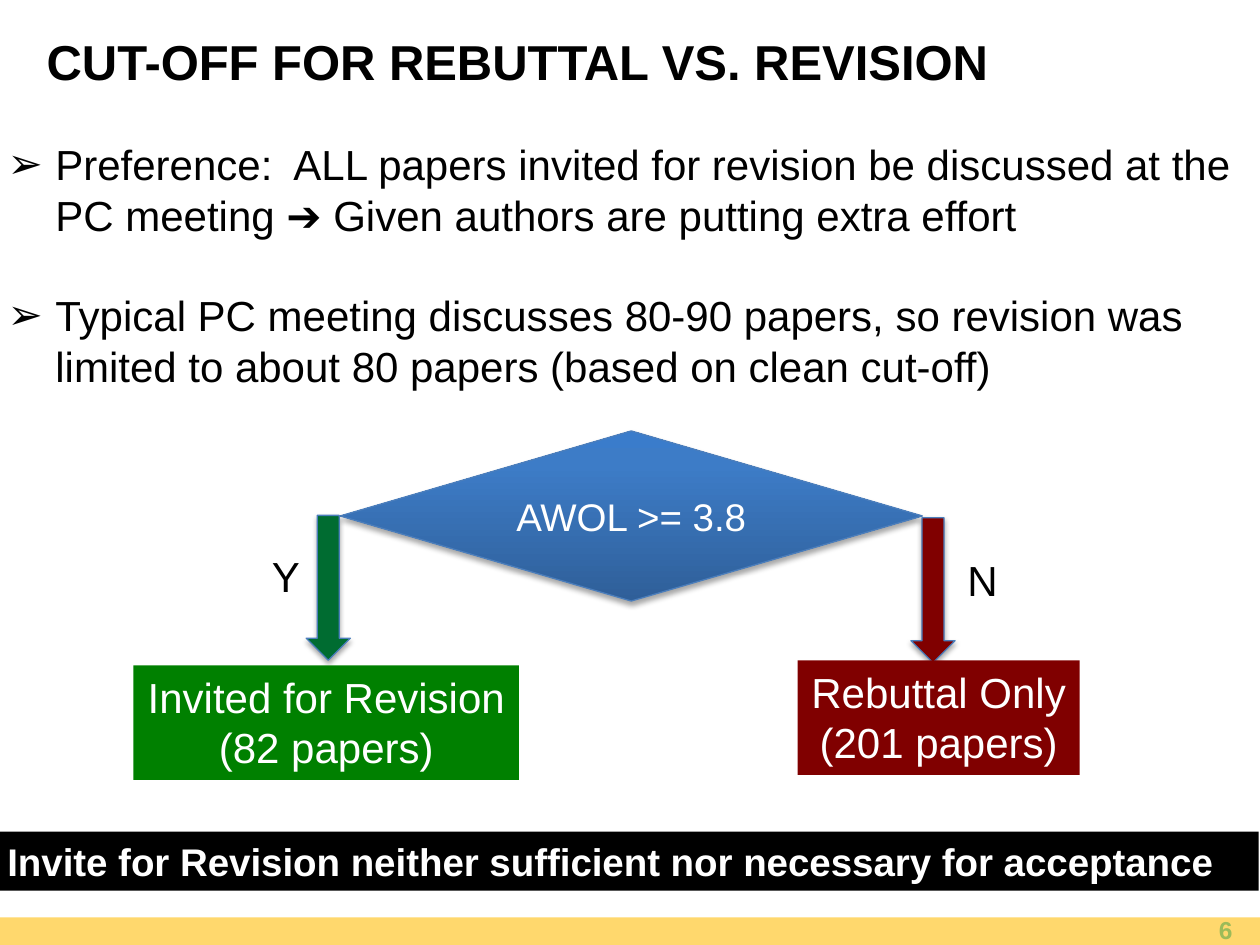
from copy import deepcopy
from dataclasses import dataclass

from pptx import Presentation
from pptx.dml.color import RGBColor
from pptx.enum.shapes import MSO_SHAPE as Kind
from pptx.enum.text import MSO_ANCHOR as Anchor, MSO_AUTO_SIZE as Fit, PP_ALIGN as Align
from pptx.oxml import parse_xml
from pptx.oxml.ns import nsdecls, qn
from pptx.util import Inches, Pt

COLS, ROWS = 100, 75
WIDE, HIGH = Inches(10), Inches(7.5)
EDGE = "4B7EBC"

Area = tuple[float, float, float, float]  # left, top, width, height in cells


@dataclass
class Branch:
    tint: str
    shaft: str
    arrow: Area
    label: str
    spot: Area
    lines: list[str]
    box: Area


BRANCHES = [
    Branch("008000", "006C31", (24.3, 40.9, 3.5, 11.5), "Y", (20.6, 43.2, 4.3, 5),
           ["Invited for Revision", "(82 papers)"], (10.6, 52.8, 30.6, 9.1)),
    Branch("800000", "800000", (72.3, 41.1, 3.5, 11.5), "N", (75.8, 43.5, 4.5, 5),
           ["Rebuttal Only", "(201 papers)"], (63.3, 52.4, 22.4, 9.1)),
]

POINTS = [
    "Preference:  ALL papers invited for revision be discussed at the PC meeting"
    " ➔ Given authors are putting extra effort",
    "Typical PC meeting discusses 80-90 papers, so revision was limited to about"
    " 80 papers (based on clean cut-off)",
]


def paint(hue: str) -> RGBColor:
    return RGBColor.from_string(hue)


def place(shape, area: Area) -> None:
    left, top, width, height = area
    shape.left, shape.width = (int(n * WIDE / COLS) for n in (left, width))
    shape.top, shape.height = (int(n * HIGH / ROWS) for n in (top, height))


def write(shape, lines: list[str], size: float = 24, hue: str = "000000",
          bold: bool = False, align=Align.LEFT, anchor=Anchor.TOP,
          wrap: bool = True, mark: str = "", gap: float = 0) -> None:
    frame = shape.text_frame
    frame.auto_size, frame.word_wrap = Fit.NONE, wrap
    frame.vertical_anchor = anchor
    for i, line in enumerate(lines):
        para = frame.paragraphs[0] if i == 0 else frame.add_paragraph()
        para.alignment = align
        para.space_before = Pt(gap if i else 0)
        if mark:
            props = para._p.get_or_add_pPr()
            props.set("marL", str(Inches(0.38)))
            props.set("indent", str(-Inches(0.38)))
            props.append(parse_xml(f'<a:buFont {nsdecls("a")} typeface="Arial"/>'))
            props.append(parse_xml(f'<a:buChar {nsdecls("a")} char="{mark}"/>'))
        run = para.add_run()
        run.text = line
        font = run.font
        font.name, font.size, font.bold = "Arial", Pt(size), bold
        font.color.rgb = paint(hue)


def draw(slide, kind, area: Area, fill: str, line: str = ""):
    shape = slide.shapes.add_shape(kind, 0, 0, 0, 0)
    place(shape, area)
    shape.fill.solid()
    shape.fill.fore_color.rgb = paint(fill)
    if line:
        shape.line.color.rgb = paint(line)
        shape.line.width = Pt(0.75)
    else:
        shape.line.fill.background()
    shape.shadow.inherit = False
    return shape


def note(slide, area: Area, text: str, **style) -> None:
    box = slide.shapes.add_textbox(0, 0, 0, 0)
    place(box, area)
    write(box, [text], **style)


def shade(shape) -> None:
    """Add a soft shadow straight below the shape."""
    shape._element.spPr.find(qn("a:effectLst")).append(parse_xml(
        f'<a:outerShdw {nsdecls("a")} blurRad="{Pt(3.1)}" dist="{Pt(1.8)}"'
        ' dir="5400000" rotWithShape="0"><a:srgbClr val="000000">'
        '<a:alpha val="35000"/></a:srgbClr></a:outerShdw>'))


def blend(shape, stops: list[tuple[float, str]]) -> None:
    """Fill with a gradient that rises from the bottom."""
    shape.fill.gradient()
    shape.fill.gradient_angle = 90
    group = shape._element.spPr.find(qn("a:gradFill")).find(qn("a:gsLst"))
    while len(group) < len(stops):
        group.append(deepcopy(group[0]))
    for stop, (share, hue) in zip(shape.fill.gradient_stops, stops):
        stop.position = share
        stop.color.rgb = paint(hue)


def fork(slide, branch: Branch) -> None:
    shade(draw(slide, Kind.DOWN_ARROW, branch.arrow, branch.shaft, EDGE))
    note(slide, branch.spot, branch.label, wrap=False)
    box = draw(slide, Kind.RECTANGLE, branch.box, branch.tint)
    write(box, branch.lines, hue="FFFFFF", align=Align.CENTER, wrap=False)


def main() -> None:
    deck = Presentation()
    deck.slide_width, deck.slide_height = WIDE, HIGH
    slide = deck.slides.add_slide(deck.slide_layouts[1])
    title, body = slide.placeholders

    draw(slide, Kind.RECTANGLE, (0, 72.8, COLS, 2.2), "FFD86D")
    place(title, (2.7, 2.2, 91.7, 5.3))
    write(title, ["CUT-OFF FOR REBUTTAL VS. REVISION"], size=28, bold=True,
          anchor=Anchor.MIDDLE)
    note(slide, (75.5, 72.5, 23.3, 2.6), "6", size=14, hue="9BBB59", bold=True,
         align=Align.RIGHT, anchor=Anchor.MIDDLE)
    place(body, (-0.4, 10.5, 100.4, 21.2))
    write(body, POINTS, mark="➢", gap=28.8)

    test = draw(slide, Kind.DIAMOND, (27, 34.2, 46.2, 13.5), "3D7CC7", EDGE)
    blend(test, [(0, "2F5F99"), (0.8, "3D7CC7"), (1, "3A7CCB")])
    shade(test)
    write(test, ["AWOL >= 3.8"], size=22, hue="FFFFFF", align=Align.CENTER,
          anchor=Anchor.MIDDLE, wrap=False)
    for branch in BRANCHES:
        fork(slide, branch)

    strip = draw(slide, Kind.RECTANGLE, (-0.4, 66, 100.3, 4.7), "000000")
    write(strip, ["Invite for Revision neither sufficient nor necessary for acceptance"],
          size=22, hue="FFFFFF", bold=True)
    deck.save("out.pptx")


if __name__ == "__main__":
    main()
